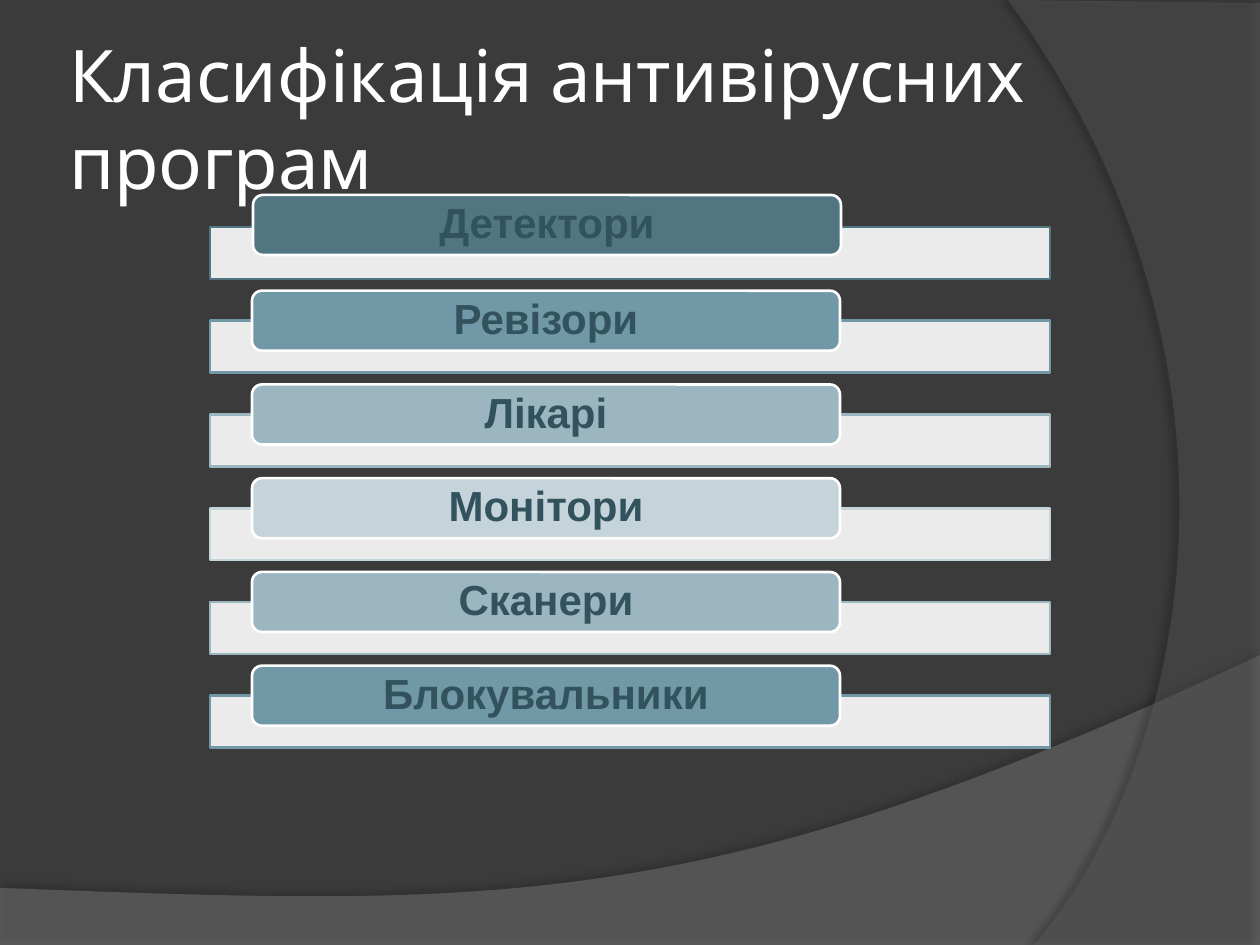
from lxml import etree
from pptx import Presentation
from pptx.dml.color import RGBColor
from pptx.enum.shapes import MSO_SHAPE
from pptx.enum.text import MSO_ANCHOR, PP_ALIGN
from pptx.oxml import parse_xml
from pptx.oxml.ns import nsdecls, qn
from pptx.util import Pt

RECT = MSO_SHAPE.RECTANGLE
ROUND = MSO_SHAPE.ROUNDED_RECTANGLE
MIDDLE = MSO_ANCHOR.MIDDLE
LEFT, CENTER = PP_ALIGN.LEFT, PP_ALIGN.CENTER

SCALE = 914400 / 126
WHITE = "FFFFFF"
KINDS = [
    ("Детектори", "517682"),
    ("Ревізори", "7198A6"),
    ("Лікарі", "9BB6C0"),
    ("Монітори", "C4D4DA"),
    ("Сканери", "9BB6C0"),
    ("Блокувальники", "7198A6"),
]


def px(n):
    """Turn pixels into EMU."""
    return round(n * SCALE)


def color(code):
    """Turn a hex string into a colour."""
    return RGBColor.from_string(code)


def paint(shape, fill, alpha=100, line=None):
    """Set the fill, its opacity in percent, and the outline."""
    shape.shadow.inherit = False
    shape.fill.solid()
    shape.fill.fore_color.rgb = color(fill)
    if alpha < 100:
        tint = shape.fill._xPr.find(qn("a:solidFill"))[0]
        etree.SubElement(tint, qn("a:alpha")).set("val", str(alpha * 1000))
    if line:
        shape.line.color.rgb = color(line)
        shape.line.width = Pt(1.5)
    else:
        shape.line.fill.background()


def shade(shape, alpha, blur, dist, angle):
    """Add a black outer shadow."""
    effects = shape._element.spPr.find(qn("a:effectLst"))
    effects.append(parse_xml(
        f'<a:outerShdw {nsdecls("a")} blurRad="{Pt(blur)}" dist="{Pt(dist)}" '
        f'dir="{angle * 60000}" algn="ctr" rotWithShape="0">'
        f'<a:srgbClr val="000000"><a:alpha val="{alpha * 1000}"/></a:srgbClr>'
        '</a:outerShdw>'))


def curve(a, b, c, d, steps=60):
    """List points along a cubic curve."""
    spots = []
    for i in range(steps + 1):
        t = i / steps
        u = 1 - t
        spots.append(tuple(
            u**3 * p + 3 * u * u * t * q + 3 * u * t * t * r + t**3 * s
            for p, q, r, s in zip(a, b, c, d)))
    return spots


def wave(slide, spots, fill, alpha, shadow):
    """Draw a translucent closed outline with a shadow."""
    first, *rest = [(px(x), px(y)) for x, y in spots]
    pen = slide.shapes.build_freeform(*first)
    pen.add_line_segments(rest, close=True)
    shape = pen.convert_to_shape()
    paint(shape, fill, alpha)
    shade(shape, *shadow)


def box(slide, kind, area, fill, alpha, line):
    """Draw a preset shape."""
    shape = slide.shapes.add_shape(kind, *map(px, area))
    paint(shape, fill, alpha, line)
    return shape


def write(shape, words, font, size, tone, align, side, edge, bold=False):
    """Put one run of text in a shape."""
    frame = shape.text_frame
    frame.word_wrap = True
    frame.vertical_anchor = MIDDLE
    frame.margin_left = frame.margin_right = px(side)
    frame.margin_top = frame.margin_bottom = px(edge)
    para = frame.paragraphs[0]
    para.alignment = align
    run = para.add_run()
    run.text = words
    run.font.name = font
    run.font.size = Pt(size)
    run.font.bold = bold
    run.font.color.rgb = color(tone)
    return para


def entry(slide, row, name, tone):
    """Draw a bar with its labelled pill."""
    drop = row * 375 / 4
    box(slide, RECT, (210, 227 + drop, 840, 52), WHITE, 90, tone)
    left, top = (252, 197 + drop) if row else (253, 195)
    pill = box(slide, ROUND, (left, top, 588, 60), tone, 100, WHITE)
    para = write(pill, name, "Arial", 24, "32525D", CENTER, 23, 0, True)
    para.line_spacing = 0.9


def main():
    """Build the slide."""
    deck = Presentation()
    deck.slide_width, deck.slide_height = px(1260), px(945)
    slide = deck.slides.add_slide(deck.slide_layouts[6])
    back = slide.background.fill
    back.solid()
    back.fore_color.rgb = color("3B3B3B")

    hill = curve((1260, 655), (704, 919), (493, 906), (0, 888))
    wave(slide, [(0, 945), (1260, 945)] + hill, "7F7F7F", 45,
         (35, 4, 3.5, 270))
    arc = curve((1034, 945), (1178, 780), (1283, 378), (1008, 0))
    wave(slide, [(1260, 3), (1260, 945)] + arc, "5E5E5E", 40,
         (45, 4, 4, 180))

    title = slide.shapes.add_textbox(*map(px, (63, 38, 1029, 158)))
    write(title, "Класифікація антивірусних програм", "Karla", 41.4,
          WHITE, LEFT, 6, 6)
    for row, (name, tone) in enumerate(KINDS):
        entry(slide, row, name, tone)
    deck.save("out.pptx")


if __name__ == "__main__":
    main()
